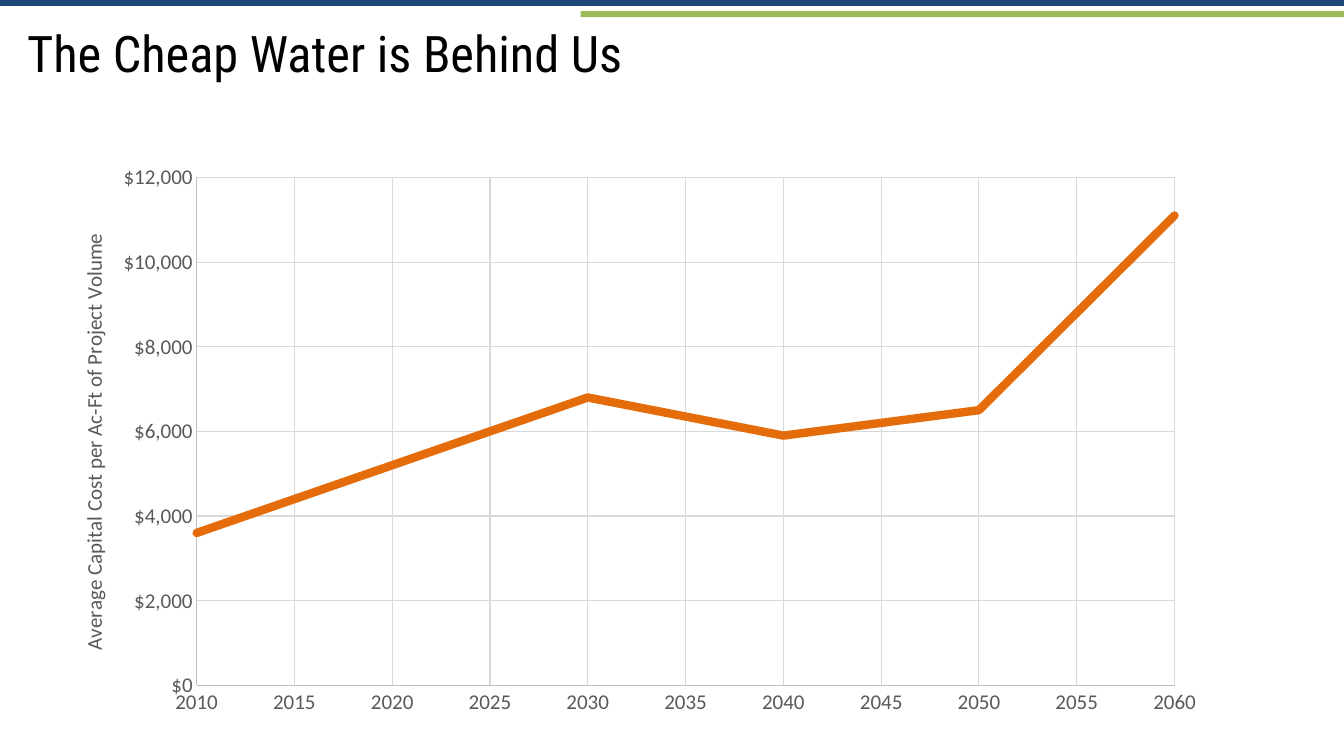
from dataclasses import dataclass

import pptx
import pptx.chart.data
import pptx.dml.color
import pptx.enum.chart
import pptx.enum.shapes
import pptx.enum.text
import pptx.oxml
import pptx.oxml.ns
import pptx.util
from pptx.util import Inches, Pt

TITLE = "The Cheap Water is Behind Us"
AXIS_TITLE = "Average Capital Cost per Ac-Ft of Project Volume"
COSTS = {2010: 3600, 2020: 5200, 2030: 6800, 2040: 5900, 2050: 6500, 2060: 11100}


@dataclass(frozen=True)
class Theme:
    navy: str = "1F497D"
    green: str = "9BBB59"
    orange: str = "E46C0A"
    black: str = "000000"
    label: str = "595959"
    axis: str = "BFBFBF"
    grid: str = "D9D9D9"
    title_font: str = "Roboto Condensed"
    chart_font: str = "Calibri"
    title_size: int = 36
    label_size: int = 15


THEME = Theme()
BARS = [  # left, top, width, height, colour
    (0, 0, 13.33, 0.06, THEME.navy),
    (5.76, 0.11, 7.58, 0.06, THEME.green),
]
TITLE_BOX = (0.17, 0.17, 12.92, 0.92)
CHART_BOX = (0.47, 1.52, 11.63, 5.68)
PLOT_BOX = (1.95, 1.76, 9.7, 5.04)
AXIS_TITLE_AT = (0.75, 2.28)


def rgb(colour):
    return pptx.dml.color.RGBColor.from_string(colour)


def set_font(font, name, size, colour):
    font.name, font.size, font.bold = name, Pt(size), False
    font.color.rgb = rgb(colour)


def set_line(line, colour, width):
    line.color.rgb = rgb(colour)
    line.width = Pt(width)


def set_layout(element, box, inner=False):
    """Place a chart part at a slide position, given in inches."""
    for old in element.xpath("./c:layout"):
        element.remove(old)
    left, top, width, height = CHART_BOX
    fractions = [(box[0] - left) / width, (box[1] - top) / height]
    fractions += [size / whole for size, whole in zip(box[2:], (width, height))]
    target = '<c:layoutTarget val="inner"/>' if inner else ""
    modes = '<c:xMode val="edge"/><c:yMode val="edge"/>'
    values = "".join(f'<c:{tag} val="{f:.4f}"/>' for tag, f in zip("xywh", fractions))
    layout = pptx.oxml.parse_xml(
        f'<c:layout {pptx.oxml.ns.nsdecls("c")}><c:manualLayout>'
        f"{target}{modes}{values}</c:manualLayout></c:layout>")
    element.insert(len(element.xpath("./c:tx")), layout)


def add_bars(s):
    for *box, colour in BARS:
        sp = s.shapes.add_shape(pptx.enum.shapes.MSO_SHAPE.RECTANGLE, *map(Inches, box))
        sp.shadow.inherit = False
        sp.fill.solid()
        sp.fill.fore_color.rgb = rgb(colour)
        sp.line.fill.background()


def add_title(s):
    sp = s.shapes.title
    sp.left, sp.top, sp.width, sp.height = map(Inches, TITLE_BOX)
    tf = sp.text_frame
    tf.text = TITLE
    tf.vertical_anchor = pptx.enum.text.MSO_ANCHOR.TOP
    p = tf.paragraphs[0]
    p.alignment = pptx.enum.text.PP_ALIGN.LEFT
    set_font(p.font, THEME.title_font, THEME.title_size, THEME.black)


def format_axis(axis, low, high, step, number_format):
    axis.minimum_scale, axis.maximum_scale, axis.major_unit = low, high, step
    axis.major_tick_mark = axis.minor_tick_mark = pptx.enum.chart.XL_TICK_MARK.NONE
    axis.has_major_gridlines = True
    set_line(axis.major_gridlines.format.line, THEME.grid, 0.75)
    set_line(axis.format.line, THEME.axis, 0.75)
    set_font(axis.tick_labels.font, THEME.chart_font, THEME.label_size, THEME.label)
    axis.tick_labels.number_format = number_format
    axis.tick_labels.number_format_is_linked = False


def add_cost_chart(s):
    data = pptx.chart.data.XyChartData()
    points = data.add_series("Series 1")
    for year, cost in COSTS.items():
        points.add_data_point(year, cost)
    kind = pptx.enum.chart.XL_CHART_TYPE.XY_SCATTER_LINES_NO_MARKERS
    chart = s.shapes.add_chart(kind, *map(Inches, CHART_BOX), data).chart
    chart.has_legend = chart.has_title = False
    set_font(chart.font, THEME.chart_font, 10, THEME.black)
    chart.plots[0].vary_by_categories = False

    series = chart.plots[0].series[0]
    series.smooth = False
    set_line(series.format.line, THEME.orange, 6)
    for ln in chart.element.xpath(".//c:ser/c:spPr/a:ln"):
        ln.set("cap", "rnd")

    format_axis(chart.category_axis, 2010, 2060, 5, "General")
    format_axis(chart.value_axis, 0, 12000, 2000, '"$"#,##0')
    title = chart.value_axis.axis_title
    title.text_frame.text = AXIS_TITLE
    p = title.text_frame.paragraphs[0]
    set_font(p.font, THEME.chart_font, THEME.label_size, THEME.label)
    set_layout(title.element, AXIS_TITLE_AT)
    set_layout(chart.element.xpath(".//c:plotArea")[0], PLOT_BOX, inner=True)


def main():
    prs = pptx.Presentation()
    prs.slide_width, prs.slide_height = Inches(13.33), Inches(7.5)
    s = prs.slides.add_slide(prs.slide_layouts[5])
    add_bars(s)
    add_title(s)
    add_cost_chart(s)
    prs.save("out.pptx")


if __name__ == "__main__":
    main()
